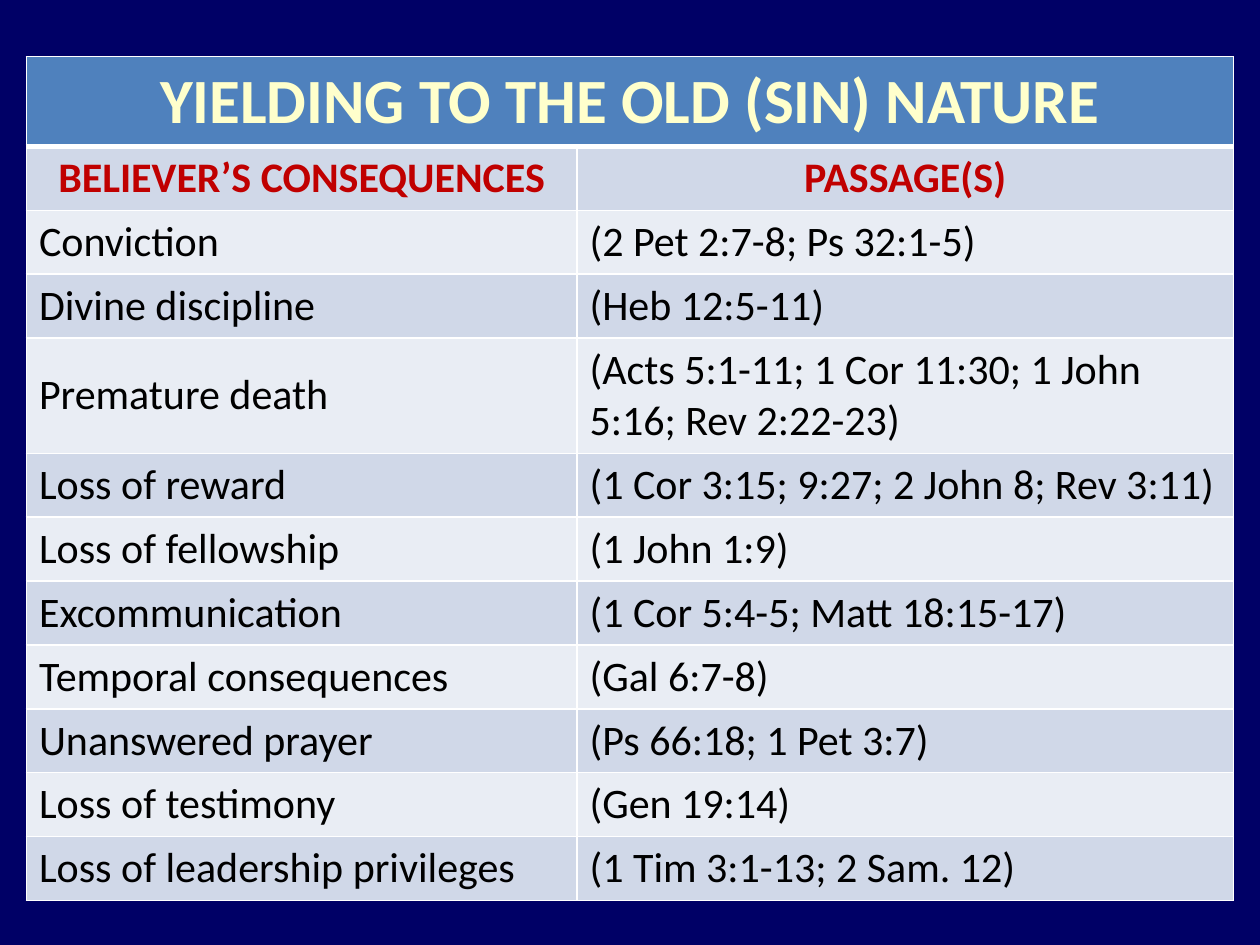
from lxml import etree
from pptx import Presentation
from pptx import util as u
from pptx.dml.color import RGBColor
from pptx.enum import text
from pptx.oxml import ns

NAVY = RGBColor(0x00, 0x00, 0x66)
BLUE = RGBColor(0x4F, 0x81, 0xBD)
CREAM = RGBColor(0xFF, 0xFF, 0xCC)
RED = RGBColor(0xC0, 0x00, 0x00)
BLACK = RGBColor(0x00, 0x00, 0x00)
WHITE = RGBColor(0xFF, 0xFF, 0xFF)
BANDS = (RGBColor(0xD0, 0xD8, 0xE8), RGBColor(0xE9, 0xED, 0xF4))

TITLE = "YIELDING TO THE OLD (SIN) NATURE"
HEADINGS = ("BELIEVER’S CONSEQUENCES", "PASSAGE(S)")
CONSEQUENCES = [
    ("Conviction", "(2 Pet 2:7-8; Ps 32:1-5)"),
    ("Divine discipline", "(Heb 12:5-11)"),
    ("Premature death", "(Acts 5:1-11; 1 Cor 11:30; 1 John 5:16; Rev 2:22-23)"),
    ("Loss of reward", "(1 Cor 3:15; 9:27; 2 John 8; Rev 3:11)"),
    ("Loss of fellowship", "(1 John 1:9)"),
    ("Excommunication", "(1 Cor 5:4-5; Matt 18:15-17)"),
    ("Temporal consequences", "(Gal 6:7-8)"),
    ("Unanswered prayer", "(Ps 66:18; 1 Pet 3:7)"),
    ("Loss of testimony", "(Gen 19:14)"),
    ("Loss of leadership privileges", "(1 Tim 3:1-13; 2 Sam. 12)"),
]

COLUMN_WIDTHS = (4.37, 5.21)
TITLE_HEIGHT, ROW_HEIGHT, TALL_HEIGHT = 0.7, 0.5, 0.9
TALL_ROW = 4

CENTER, LEFT = text.PP_ALIGN.CENTER, text.PP_ALIGN.LEFT
TITLE_FORMAT = {"size": u.Pt(36), "bold": True, "color": CREAM, "align": CENTER}
HEADING_FORMAT = {"size": u.Pt(24), "bold": True, "color": RED, "align": CENTER}
BODY_FORMAT = {"size": u.Pt(24), "bold": False, "color": BLACK, "align": LEFT}


def set_borders(cell, top=1, bottom=1):
    properties = cell._tc.get_or_add_tcPr()
    for side, points in {"L": 1, "R": 1, "T": top, "B": bottom}.items():
        line = etree.SubElement(properties, ns.qn(f"a:ln{side}"), w=str(u.Pt(points)))
        fill = etree.SubElement(line, ns.qn("a:solidFill"))
        etree.SubElement(fill, ns.qn("a:srgbClr"), val=str(WHITE))


def write_cell(cell, words, style, background):
    cell.fill.solid()
    cell.fill.fore_color.rgb = background
    cell.vertical_anchor = text.MSO_ANCHOR.MIDDLE
    paragraph = cell.text_frame.paragraphs[0]
    paragraph.alignment = style["align"]
    run = paragraph.add_run()
    run.text = words
    run.font.name = "Calibri"
    run.font.color.rgb = style["color"]
    for name in ("size", "bold"):
        setattr(run.font, name, style[name])


def add_consequences_table(slide, left, top, width, height):
    rows = [HEADINGS, *CONSEQUENCES]
    frame = slide.shapes.add_table(len(rows) + 1, 2, left, top, width, height)
    table = frame.table
    for column, share in zip(table.columns, COLUMN_WIDTHS):
        column.width = int(width * share / sum(COLUMN_WIDTHS))

    heights = [TITLE_HEIGHT] + [ROW_HEIGHT] * len(rows)
    heights[TALL_ROW] = TALL_HEIGHT
    for row, share in zip(table.rows, heights):
        row.height = int(height * share / sum(heights))

    for index, row in enumerate(table.rows):
        for cell in row.cells:
            set_borders(cell, top=3 if index == 1 else 1, bottom=3 if index == 0 else 1)

    title = table.cell(0, 0)
    title.merge(table.cell(0, 1))
    write_cell(title, TITLE, TITLE_FORMAT, BLUE)
    for index, entries in enumerate(rows):
        style = BODY_FORMAT if index else HEADING_FORMAT
        for column, words in enumerate(entries):
            write_cell(table.cell(index + 1, column), words, style, BANDS[index % 2])


def main():
    presentation = Presentation()
    presentation.slide_width, presentation.slide_height = u.Inches(10), u.Inches(7.5)
    slide = presentation.slides.add_slide(presentation.slide_layouts[6])
    slide.background.fill.solid()
    slide.background.fill.fore_color.rgb = NAVY
    add_consequences_table(slide, u.Inches(0.21), u.Inches(0.45),
                           u.Inches(9.58), u.Inches(6.6))
    presentation.save("out.pptx")


if __name__ == "__main__":
    main()
